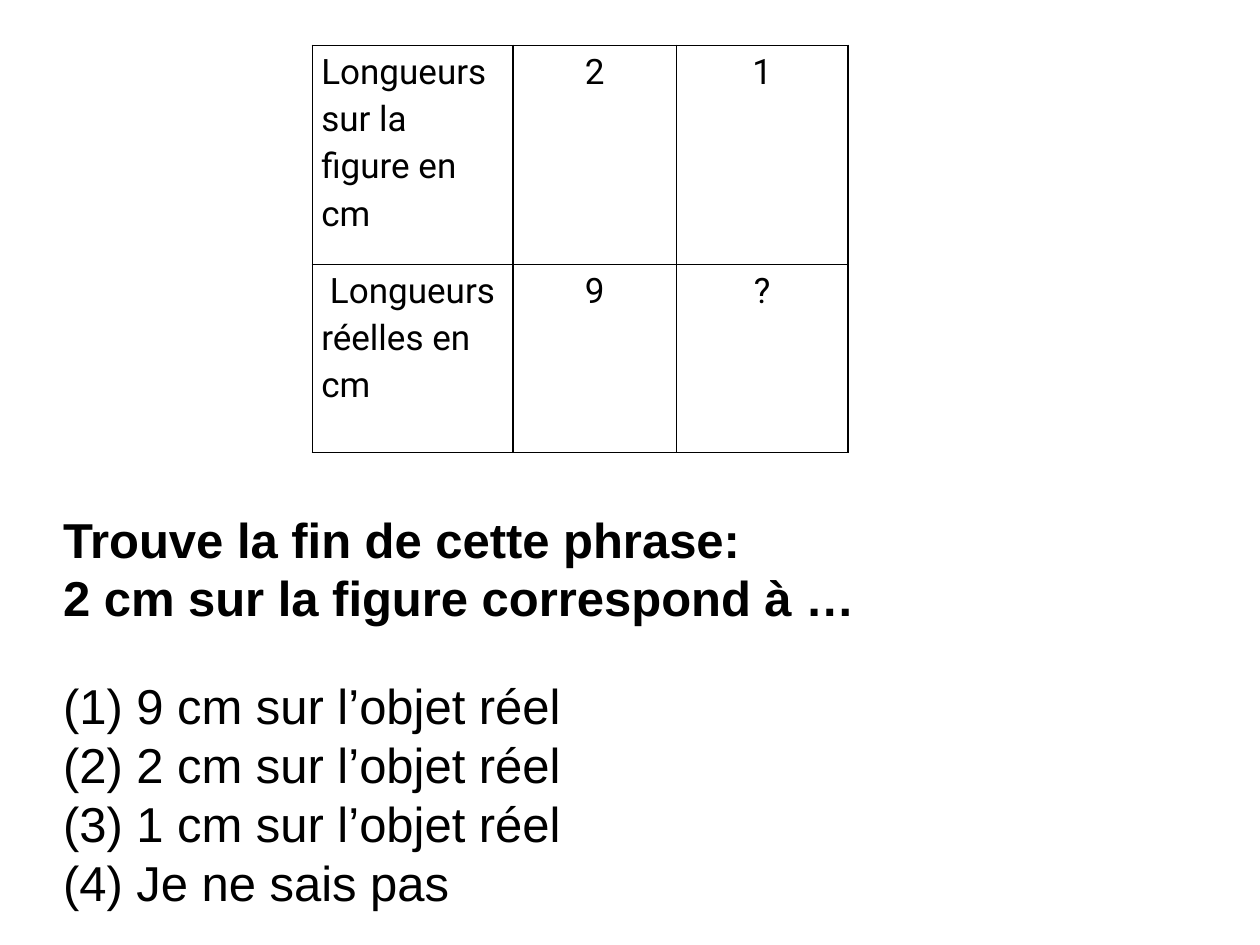
from lxml import etree
from pptx import Presentation
from pptx.dml.color import RGBColor
from pptx.enum import text
from pptx.oxml import ns
from pptx.util import Inches, Pt

BLACK = RGBColor(0, 0, 0)

LENGTHS = [
    ["Longueurs sur la figure en cm", "2", "1"],
    [" Longueurs réelles en cm", "9", "?"],
]
COLUMN_WIDTHS = [1.59, 1.3, 1.36]
ROW_HEIGHTS = [1.74, 1.49]

QUESTION = [
    "Trouve la fin de cette phrase:",
    "2 cm sur la figure correspond à …",
]
ANSWERS = [
    " 9 cm sur l’objet réel",
    " 2 cm sur l’objet réel",
    " 1 cm sur l’objet réel",
    " Je ne sais pas",
]


def set_font(paragraph, name, size, bold=False):
    font = paragraph.font
    font.name, font.size, font.bold = name, Pt(size), bold
    font.color.rgb = BLACK


def add_borders(cell, width=Pt(1)):
    properties = cell._tc.get_or_add_tcPr()
    for position, side in enumerate(("lnL", "lnR", "lnT", "lnB")):
        line = etree.Element(ns.qn(f"a:{side}"), w=str(width))
        fill = etree.SubElement(line, ns.qn("a:solidFill"))
        etree.SubElement(fill, ns.qn("a:srgbClr"), val=str(BLACK))
        properties.insert(position, line)


def add_length_table(slide, left, top):
    width, height = Inches(sum(COLUMN_WIDTHS)), Inches(sum(ROW_HEIGHTS))
    frame = slide.shapes.add_table(
        len(ROW_HEIGHTS), len(COLUMN_WIDTHS), left, top, width, height)
    table = frame.table
    table.first_row = table.horz_banding = False
    for column, column_width in zip(table.columns, COLUMN_WIDTHS):
        column.width = Inches(column_width)
    for row, row_height, values in zip(table.rows, ROW_HEIGHTS, LENGTHS):
        row.height = Inches(row_height)
        for index, (cell, value) in enumerate(zip(row.cells, values)):
            cell.margin_left = cell.margin_right = Inches(0.07)
            cell.margin_top = cell.margin_bottom = 0
            cell.fill.background()
            add_borders(cell)
            cell.text = value
            paragraph = cell.text_frame.paragraphs[0]
            paragraph.line_spacing = 1.15
            paragraph.alignment = (
                text.PP_ALIGN.CENTER if index else text.PP_ALIGN.LEFT)
            set_font(paragraph, "Roboto", 20)


def set_numbering(paragraph, numbered):
    """Number the paragraph as (1), (2), ... or take its bullet away."""
    properties = paragraph._p.get_or_add_pPr()
    indent = Inches(0.38) if numbered else 0
    properties.set("marL", str(indent))
    properties.set("indent", str(-indent))
    if numbered:
        bullet = etree.Element(ns.qn("a:buAutoNum"), type="arabicParenBoth")
    else:
        bullet = etree.Element(ns.qn("a:buNone"))
    # Bullets come after spacing and before the default run properties.
    properties.find(ns.qn("a:defRPr")).addprevious(bullet)


def fill_question(body, left, top, width, height):
    body.left, body.top, body.width, body.height = left, top, width, height
    frame = body.text_frame
    frame.word_wrap = True
    frame.auto_size = text.MSO_AUTO_SIZE.SHAPE_TO_FIT_TEXT
    frame.vertical_anchor = text.MSO_ANCHOR.TOP
    frame.text = "\n".join(QUESTION + ANSWERS)
    for index, paragraph in enumerate(frame.paragraphs):
        is_answer = index >= len(QUESTION)
        first_answer = index == len(QUESTION)
        paragraph.space_before = Pt(28 if first_answer else 0)
        set_font(paragraph, "Arial", 28, bold=not is_answer)
        set_numbering(paragraph, is_answer)


def main():
    presentation = Presentation()
    presentation.slide_width = Inches(10)
    presentation.slide_height = Inches(7.5)
    slide = presentation.slides.add_slide(presentation.slide_layouts[1])
    title, body = slide.placeholders
    title.element.getparent().remove(title.element)

    add_length_table(slide, Inches(2.48), Inches(0.36))
    fill_question(body, Inches(0.4), Inches(3.99), Inches(9.13), Inches(3.33))
    presentation.save("out.pptx")


if __name__ == "__main__":
    main()
